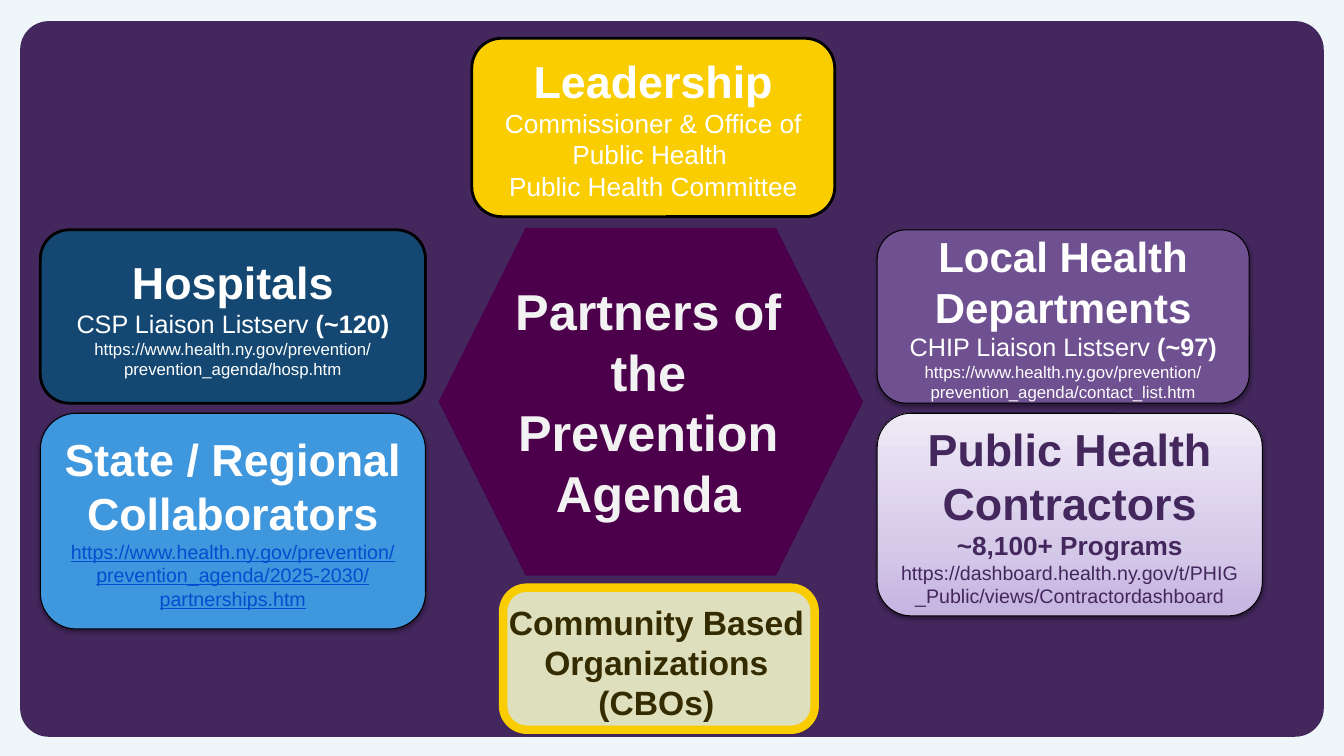
"""Build the slide on the partners of the Prevention Agenda."""
from dataclasses import dataclass

from lxml import etree
from pptx import Presentation
from pptx.dml.color import RGBColor
from pptx.enum.shapes import MSO_SHAPE
from pptx.enum.text import MSO_ANCHOR, MSO_AUTO_SIZE, PP_ALIGN
from pptx.oxml import parse_xml
from pptx.oxml.ns import qn
from pptx.util import Emu, Inches, Pt

ROUND = MSO_SHAPE.ROUNDED_RECTANGLE
HEX = MSO_SHAPE.HEXAGON
TOP = MSO_ANCHOR.TOP
MIDDLE = MSO_ANCHOR.MIDDLE
CENTER = PP_ALIGN.CENTER
FIXED = MSO_AUTO_SIZE.NONE
NS = "http://schemas.openxmlformats.org/drawingml/2006/main"
CELL = Inches(0.1)
LEFT, RIGHT, WIDE = 4, 87, 38.2
UPPER, LOWER, TALL = 22.8, 41, 17.2
CBO = (49.9, 58.3, 30.9, 14.1)
SITE = "https://www.health.ny.gov/prevention/prevention_agenda/"


@dataclass(frozen=True)
class Theme:
    """Colours, type sizes and font of the slide."""

    font: str = "Arial"
    page: str = "EEF6FA"
    panel: str = "43275D"
    hub: str = "4C004C"
    pale: str = "F2F2F2"
    white: str = "FFFFFF"
    black: str = "000000"
    violet: str = "6F5091"
    navy: str = "144872"
    sky: str = "3F97DD"
    gold: str = "F9CD00"
    mist: str = "D8E4EF"
    edge: str = "42255C"
    link: str = "044DD0"
    fade: tuple = ((0, "C5B3E1"), (35, "D6CAE9"), (100, "EFEAF7"))
    title: float = 36
    head: float = 32
    tight: float = 30
    group: float = 24
    lead: float = 18.7
    body: float = 18
    url: float = 14
    small: float = 12


T = Theme()


def rgb(code):
    """Turn a hex code into a colour."""
    return RGBColor.from_string(code)


def grid(*cells):
    """Turn grid cells into lengths."""
    return [Emu(round(n * CELL)) for n in cells]


def shade(shape, alpha):
    """Make a solid fill partly clear."""
    tint = shape._element.spPr.find(qn("a:solidFill"))[0]
    etree.SubElement(tint, qn("a:alpha"), val=str(alpha * 1000))


def blend(shape, stops):
    """Fill a shape with a gradient that runs upward."""
    marks = "".join(
        f'<a:gs pos="{pos * 1000}"><a:srgbClr val="{code}"/></a:gs>'
        for pos, code in stops)
    fill = parse_xml(
        f'<a:gradFill xmlns:a="{NS}" rotWithShape="1"><a:gsLst>{marks}</a:gsLst>'
        '<a:lin ang="16200000" scaled="0"/></a:gradFill>')
    shape._element.spPr.find(qn("a:prstGeom")).addnext(fill)


def drop(shape, alpha, dist):
    """Cast a soft shadow straight down."""
    glow = shape._element.spPr.find(qn("a:effectLst"))
    glow.append(parse_xml(
        f'<a:outerShdw xmlns:a="{NS}" blurRad="{Pt(3.1)}" dist="{Pt(dist)}" '
        'dir="5400000" rotWithShape="0">'
        f'<a:srgbClr val="{T.black}"><a:alpha val="{alpha * 1000}"/></a:srgbClr>'
        '</a:outerShdw>'))


def block(slide, kind, box, fill, line=None, width=0.75):
    """Add a preset shape with a fill and an optional outline."""
    shape = slide.shapes.add_shape(kind, *grid(*box))
    shape.shadow.inherit = False
    if isinstance(fill, tuple):
        blend(shape, fill)
    else:
        shape.fill.solid()
        shape.fill.fore_color.rgb = rgb(fill)
    if line:
        shape.line.color.rgb = rgb(line)
        shape.line.width = Pt(width)
    else:
        shape.line.fill.background()
    return shape


def write(shape, paras, color, anchor=MIDDLE):
    """Write centred paragraphs of (text, size, bold, link) runs."""
    frame = shape.text_frame
    frame.word_wrap = True
    frame.auto_size = FIXED
    frame.vertical_anchor = anchor
    for i, runs in enumerate(paras):
        para = frame.paragraphs[0] if i == 0 else frame.add_paragraph()
        para.alignment = CENTER
        for text, size, bold, link in runs:
            run = para.add_run()
            run.text = text
            font = run.font
            font.name, font.size, font.bold = T.font, Pt(size), bold
            font.color.rgb = rgb(T.link if link else color)
            if link:
                font.underline = True


def bold(text, size):
    """Describe a bold run."""
    return text, size, True, False


def plain(text, size, link=False):
    """Describe a regular run."""
    return text, size, False, link


def card(slide, box, fill, paras, color=T.white, width=0.75, cast=None):
    """Add a rounded partner card with text."""
    shape = block(slide, ROUND, box, fill, T.black, width)
    if cast:
        drop(shape, *cast)
    write(shape, paras, color)


def hub(slide):
    """Draw the central hexagon and set the title on it."""
    block(slide, HEX, (43.5, 22.6, 42.1, 34.5), T.hub)
    title = slide.shapes.title
    title.left, title.top, title.width, title.height = grid(49.9, 27.3, 28.8, 25.2)
    write(title, [[bold("Partners of the Prevention Agenda", T.title)]], T.pale, TOP)
    slide.shapes._spTree.append(title._element)


def cards(slide):
    """Place the five partner cards."""
    card(slide, (RIGHT, UPPER, 36.9, TALL), T.violet, [
        [bold("Local Health Departments", T.tight)],
        [plain("CHIP Liaison Listserv ", T.body), bold("(~97)", T.body)],
        [plain(SITE + "contact_list.htm", T.small)]], cast=(35, 1.8))
    card(slide, (LEFT, UPPER, WIDE, TALL), T.navy, [
        [bold("Hospitals", T.head)],
        [plain("CSP Liaison Listserv ", T.body), bold("(~120)", T.body)],
        [plain(SITE + "hosp.htm", T.small)]], width=2)
    card(slide, (RIGHT, LOWER, WIDE, 20.1), T.fade, [
        [bold("Public Health Contractors", T.head)],
        [bold("~8,100+ Programs ", T.lead),
         plain("https://dashboard.health.ny.gov/t/PHIG_Public/views/"
               "Contractordashboard", T.url)]], T.panel, cast=(38, 1.6))
    card(slide, (LEFT, LOWER, WIDE, 21.4), T.sky, [
        [bold("State / Regional Collaborators", T.head)],
        [plain(SITE + "2025-2030/partnerships.htm", T.url, True)]], cast=(38, 1.6))
    card(slide, (46.8, 3.8, 36, 17.7), T.gold, [
        [bold("Leadership", T.head)],
        [plain("Commissioner & Office of Public Health ", T.lead)],
        [plain("Public Health Committee", T.lead)]], width=2)


def groups(slide):
    """Draw the community box with its label under a clear gold veil."""
    drop(block(slide, ROUND, CBO, T.mist, T.edge), 38, 1.6)
    label = slide.shapes.add_textbox(*grid(47.4, 59.2, 35.4, 17.2))
    name = "Community Based Organizations (CBOs)"
    write(label, [[bold(name, T.group)]], T.black, TOP)
    shade(block(slide, ROUND, CBO, T.gold, T.gold, 6), 21)


def main():
    """Build and save the slide."""
    deck = Presentation()
    deck.slide_width, deck.slide_height = Inches(13.33), Inches(7.5)
    slide = deck.slides.add_slide(deck.slide_layouts[5])
    back = slide.background.fill
    back.solid()
    back.fore_color.rgb = rgb(T.page)
    panel = block(slide, ROUND, (2, 2.1, 129.3, 71), T.panel)
    panel.adjustments[0] = 0.04
    hub(slide)
    cards(slide)
    groups(slide)
    deck.save("out.pptx")


if __name__ == "__main__":
    main()
